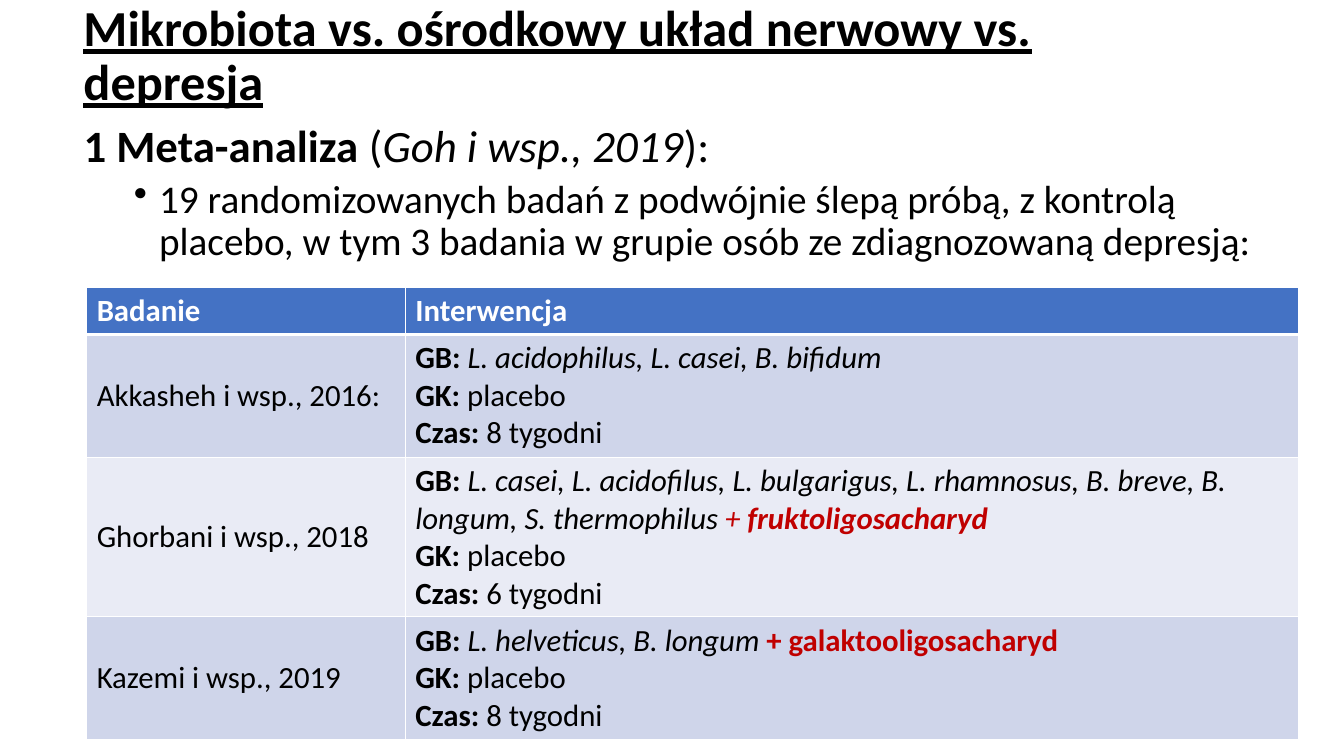
from lxml.etree import SubElement
from pptx import Presentation
from pptx.dml.color import RGBColor
from pptx.enum.text import MSO_ANCHOR
from pptx.oxml.ns import qn
from pptx.util import Inches, Pt

BLACK, WHITE, RED, BLUE = "000000", "FFFFFF", "C00000", "4472C4"
BANDS = ["CFD5EA", "E9EBF5"]

TITLE = [("Mikrobiota vs. ośrodkowy układ nerwowy vs. depresja", "bu")]
LEAD = [("1 Meta-analiza ", "b"), ("(", ""), ("Goh i wsp., 2019", "i"), ("):", "")]
POINT = [("19 randomizowanych badań z podwójnie ślepą próbą, z kontrolą placebo, "
          "w tym 3 badania w grupie osób ze zdiagnozowaną depresją:", "")]
HEADS = ["Badanie", "Interwencja"]
STUDIES = [
    ("Akkasheh i wsp., 2016:",
     [("L. acidophilus, L. casei, B. bifidum", "i")], "8 tygodni"),
    ("Ghorbani i wsp., 2018",
     [("L. casei, L. acidofilus, L. bulgarigus, L. rhamnosus, B. breve, "
       "B. longum, S. thermophilus ", "i"),
      ("+ ", "ir"), ("fruktoligosacharyd", "bir")], "6 tygodni"),
    ("Kazemi i wsp., 2019",
     [("L. helveticus, B. longum ", "i"), ("+ galaktooligosacharyd", "br")],
     "8 tygodni"),
]
COLS = [3.16, 8.86]
ROWS = [0.47, 1.22, 1.58, 1.22]


def paint(part, color):
    if hasattr(part, "solid"):
        part.solid()
        part.fore_color.rgb = RGBColor.from_string(color)
    else:
        part.color.rgb = RGBColor.from_string(color)


def write(frame, lines, sizes, color=BLACK):
    frame.word_wrap = True
    for n, (runs, size) in enumerate(zip(lines, sizes)):
        para = frame.add_paragraph() if n else frame.paragraphs[0]
        para.font.name = "Calibri"
        para.font.size = Pt(size)
        paint(para.font, color)
        for text, style in runs:
            run = para.add_run()
            run.text = text
            for mark, name in (("b", "bold"), ("i", "italic"), ("u", "underline")):
                if mark in style:
                    setattr(run.font, name, True)
            if "r" in style:
                paint(run.font, RED)


def place(box, lines, sizes):
    frame = slide.shapes.add_textbox(*map(Inches, box)).text_frame
    write(frame, lines, sizes)
    for para in frame.paragraphs:
        para.line_spacing = 0.9
    return frame


def edge(cell, base):
    props = cell._tc.get_or_add_tcPr()
    for n, (side, width) in enumerate(zip("LRTB", (1, 1, 1, base))):
        line = props.makeelement(qn("a:ln" + side), {"w": str(Pt(width))})
        fill = SubElement(line, qn("a:solidFill"))
        SubElement(fill, qn("a:srgbClr"), val=WHITE)
        props.insert(n, line)


deck = Presentation()
deck.slide_width, deck.slide_height = Inches(13.33), Inches(7.5)
slide = deck.slides.add_slide(deck.slide_layouts[6])

title = place((0.73, -0.16, 11.5, 1.45), [TITLE], [36])
title.vertical_anchor = MSO_ANCHOR.MIDDLE

body = place((0.73, 1.18, 12.02, 1.92), [LEAD, POINT], [32, 28])
lead, point = body.paragraphs
lead.space_before, point.space_before = Pt(10), Pt(5)
props = point._p.get_or_add_pPr()
props.set("marL", str(Inches(0.75)))
props.set("indent", str(Inches(-0.25)))
bullet = props.makeelement(qn("a:buChar"), {"char": "•"})
props.find(qn("a:spcBef")).addnext(bullet)

grid = [[[[(head, "b")]] for head in HEADS]]
for name, mix, time in STUDIES:
    grid.append([[[(name, "")]],
                 [[("GB: ", "b"), *mix],
                  [("GK: ", "b"), ("placebo", "")],
                  [("Czas: ", "b"), (time, "")]]])

table = slide.shapes.add_table(
    len(ROWS), len(COLS), Inches(0.86), Inches(2.85),
    Inches(sum(COLS)), Inches(sum(ROWS))).table
for col, width in zip(table.columns, COLS):
    col.width = Inches(width)
for row, height in zip(table.rows, ROWS):
    row.height = Inches(height)
for r, line in enumerate(grid):
    for c, lines in enumerate(line):
        cell = table.cell(r, c)
        paint(cell.fill, BANDS[(r - 1) % 2] if r else BLUE)
        write(cell.text_frame, lines, [22] * len(lines), BLACK if r else WHITE)
        if r and c == 0:
            cell.vertical_anchor = MSO_ANCHOR.MIDDLE
        edge(cell, 1 if r else 3)

deck.save("out.pptx")
